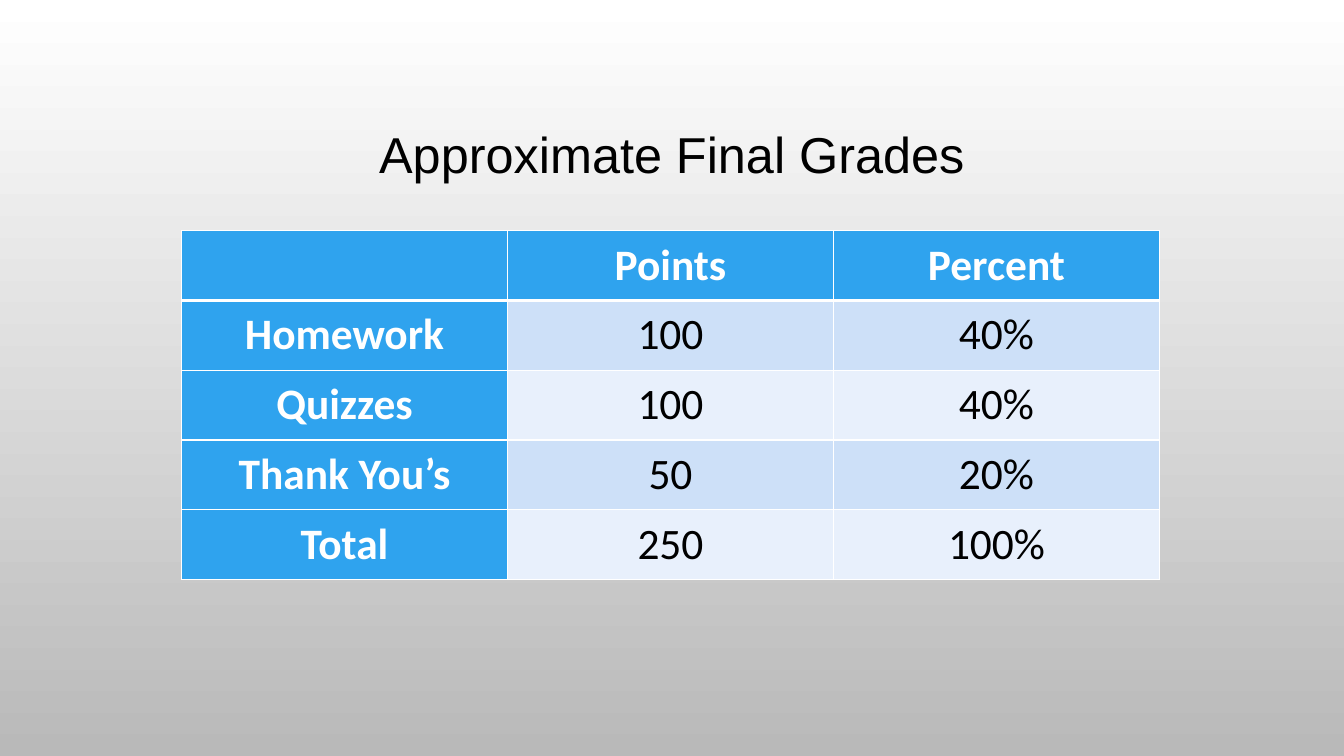
from dataclasses import dataclass

from lxml import etree
from pptx import Presentation, util as u
from pptx.dml.color import RGBColor
from pptx.enum import text
from pptx.oxml import ns


@dataclass(frozen=True)
class Theme:
    title_font: str = "Arial"
    table_font: str = "Calibri"
    title_size: int = 36
    table_size: int = 31
    ink: str = "000000"
    white: str = "FFFFFF"
    backdrop_end: str = "B9B9B9"
    header: str = "2FA3EE"
    bands: tuple = ("CDE0F8", "E8F0FC")
    thin: int = 1
    thick: int = 3


THEME = Theme()
GRADES = [
    ("", "Points", "Percent"),
    ("Homework", "100", "40%"),
    ("Quizzes", "100", "40%"),
    ("Thank You’s", "50", "20%"),
    ("Total", "250", "100%"),
]


def write(tf, words, font, size, color, spacing, bold=False):
    p = tf.paragraphs[0]
    p.alignment = text.PP_ALIGN.CENTER
    p.line_spacing = spacing
    if words:
        r = p.add_run()
        r.text = words
        r.font.name, r.font.size, r.font.bold = font, u.Pt(size), bold
        r.font.color.rgb = RGBColor.from_string(color)


def set_borders(cell, widths):
    """Draw white borders; widths in points for left, right, top, bottom."""
    tc_pr = cell._tc.get_or_add_tcPr()
    for side, width in zip("LRTB", widths):
        ln = etree.SubElement(tc_pr, ns.qn(f"a:ln{side}"), w=str(u.Pt(width)))
        fill = etree.SubElement(ln, ns.qn("a:solidFill"))
        etree.SubElement(fill, ns.qn("a:srgbClr"), val=THEME.white)


def add_backdrop(s):
    fill = s.background.fill
    fill.gradient()
    fill.gradient_angle = 270
    for stop, color in zip(fill.gradient_stops, (THEME.white, THEME.backdrop_end)):
        stop.color.rgb = RGBColor.from_string(color)


def add_title(s, words, left, top, width, height):
    sp = s.shapes.title
    sp.left, sp.top, sp.width, sp.height = map(u.Inches, (left, top, width, height))
    tf = sp.text_frame
    tf.word_wrap = True
    tf.vertical_anchor = text.MSO_ANCHOR.MIDDLE
    write(tf, words, THEME.title_font, THEME.title_size, THEME.ink, 0.9)


def add_grades(s, rows, left, top, width, height):
    box = map(u.Inches, (left, top, width, height))
    table = s.shapes.add_table(len(rows), len(rows[0]), *box).table
    for i, row in enumerate(rows):
        for j, words in enumerate(row):
            cell = table.cell(i, j)
            heading = i == 0 or j == 0
            # A thick rule parts the header row from the body
            set_borders(cell, (THEME.thin, THEME.thin,
                               THEME.thick if i == 1 else THEME.thin,
                               THEME.thick if i == 0 else THEME.thin))
            cell.fill.solid()
            cell.fill.fore_color.rgb = RGBColor.from_string(
                THEME.header if heading else THEME.bands[(i - 1) % 2])
            cell.margin_left = cell.margin_right = u.Inches(0.12)
            cell.margin_top = cell.margin_bottom = 0
            write(cell.text_frame, words, THEME.table_font, THEME.table_size,
                  THEME.white if heading else THEME.ink, 1.15, heading)


def main():
    prs = Presentation()
    prs.slide_width, prs.slide_height = u.Inches(13.33), u.Inches(7.5)
    s = prs.slides.add_slide(prs.slide_layouts.get_by_name("Title Only"))
    add_backdrop(s)
    add_title(s, "Approximate Final Grades", 1, 0.68, 11.33, 1.75)
    add_grades(s, GRADES, 1.8, 2.29, 9.7, 3.46)
    prs.save("out.pptx")


if __name__ == "__main__":
    main()
